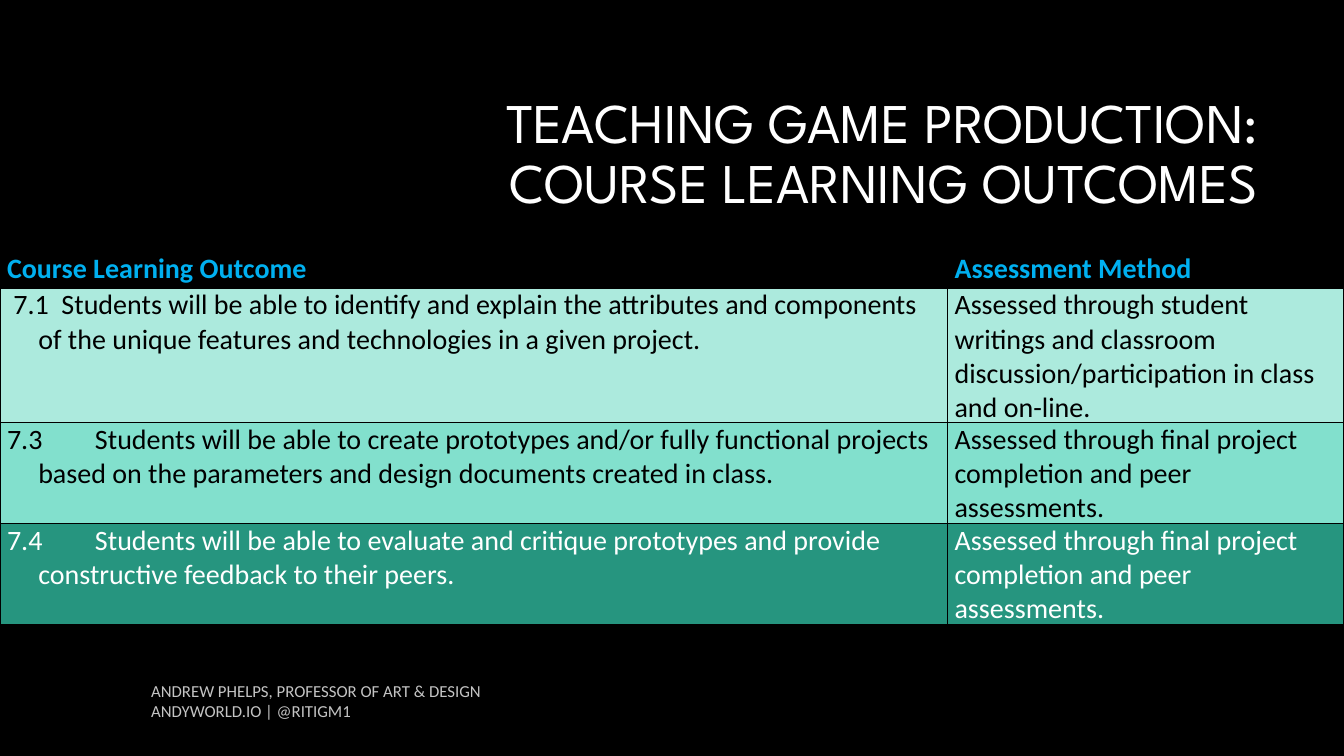
from dataclasses import dataclass

from lxml import etree
from pptx import Presentation
from pptx.dml.color import RGBColor
from pptx.enum.text import MSO_ANCHOR, MSO_AUTO_SIZE, PP_ALIGN
from pptx.oxml.ns import qn
from pptx.util import Inches, Pt

RIGHT = PP_ALIGN.RIGHT
TOP, MIDDLE = MSO_ANCHOR.TOP, MSO_ANCHOR.MIDDLE
NO_AUTOFIT = MSO_AUTO_SIZE.NONE

BLACK = RGBColor(0x00, 0x00, 0x00)
WHITE = RGBColor(0xFF, 0xFF, 0xFF)
GRAY = RGBColor(0xC4, 0xC4, 0xC4)
SKY = RGBColor(0x00, 0xB0, 0xF0)
MINT = RGBColor(0xAC, 0xEA, 0xDD)
AQUA = RGBColor(0x82, 0xE0, 0xCD)
TEAL = RGBColor(0x26, 0x95, 0x7F)

BODY_FONT = "Calibri"
TITLE_FONT = "League Spartan"
SLIDE_WIDTH, SLIDE_HEIGHT = Inches(13.33), Inches(7.5)
GRID_COLUMNS, GRID_ROWS = 160, 90
HANGING = Inches(0.31)
TAB_STOP = Inches(0.38)
CELL_MARGIN = Inches(0.07)


@dataclass(frozen=True)
class OutcomeRow:
    outcome: str
    assessment: str
    rows: float
    ink: RGBColor
    band: RGBColor | None = None
    header: bool = False


FINAL_PROJECT = "Assessed through final project completion and peer assessments."
OUTCOME_COLUMNS = (112.8, 47.2)
OUTCOME_ROWS = (
    OutcomeRow("Course Learning Outcome", "Assessment Method", 4.3, SKY, header=True),
    OutcomeRow(
        " 7.1  Students will be able to identify and explain the attributes and "
        "components of the unique features and technologies in a given project.",
        "Assessed through student writings and classroom "
        "discussion/participation in class and on-line.",
        14.5, BLACK, MINT),
    OutcomeRow(
        "7.3\t Students will be able to create prototypes and/or fully functional "
        "projects based on the parameters and design documents created in class.",
        FINAL_PROJECT, 10.9, BLACK, AQUA),
    OutcomeRow(
        "7.4\t Students will be able to evaluate and critique prototypes and "
        "provide constructive feedback to their peers.",
        FINAL_PROJECT, 10.9, WHITE, TEAL),
)
FOOTER_LINES = ("ANDREW PHELPS, PROFESSOR OF ART & DESIGN", "ANDYWORLD.IO | @RITIGM1")


def across(columns: float) -> int:
    return round(SLIDE_WIDTH * columns / GRID_COLUMNS)


def down(rows: float) -> int:
    return round(SLIDE_HEIGHT * rows / GRID_ROWS)


def add_run(paragraph, text: str, size: float, color: RGBColor,
            font: str = BODY_FONT, bold: bool = False) -> None:
    run = paragraph.add_run()
    run.text = text
    run.font.size = Pt(size)
    run.font.name = font
    run.font.bold = bold
    run.font.color.rgb = color


def add_title(slide) -> None:
    title = slide.shapes.title
    title.left, title.top = across(38), down(10)
    title.width, title.height = across(113), down(17)
    frame = title.text_frame
    frame.word_wrap = True
    frame.auto_size = NO_AUTOFIT
    frame.vertical_anchor = MIDDLE
    heading = frame.paragraphs[0]
    heading.alignment = RIGHT
    heading.line_spacing = 0.9
    add_run(heading, "TEACHING GAME PRODUCTION: COURSE LEARNING OUTCOMES",
            40, WHITE, TITLE_FONT)


def add_footer(slide) -> None:
    frame = slide.shapes.add_textbox(across(18), down(81), across(87), down(6)).text_frame
    frame.word_wrap = True
    frame.vertical_anchor = TOP
    frame.margin_left = frame.margin_right = 0
    frame.margin_top = frame.margin_bottom = 0
    for index, line in enumerate(FOOTER_LINES):
        paragraph = frame.add_paragraph() if index else frame.paragraphs[0]
        add_run(paragraph, line, 12, GRAY)


def add_borders(cell) -> None:
    properties = cell._tc.get_or_add_tcPr()
    for side in ("a:lnL", "a:lnR", "a:lnT", "a:lnB"):
        border = etree.SubElement(properties, qn(side), w=str(Pt(1)))
        fill = etree.SubElement(border, qn("a:solidFill"))
        etree.SubElement(fill, qn("a:srgbClr"), val=str(BLACK))


def hang_number(paragraph) -> None:
    properties = paragraph._p.get_or_add_pPr()
    properties.set("marL", str(HANGING))
    properties.set("indent", str(-HANGING))
    tabs = etree.SubElement(properties, qn("a:tabLst"))
    etree.SubElement(tabs, qn("a:tab"), pos=str(TAB_STOP), algn="l")
    paragraph.space_after = Pt(6)


def fill_cell(cell, text: str, row: OutcomeRow, numbered: bool) -> None:
    cell.margin_left = cell.margin_right = CELL_MARGIN
    cell.margin_top = cell.margin_bottom = 0
    cell.vertical_anchor = TOP
    add_borders(cell)
    if row.band is None:
        cell.fill.background()
    else:
        cell.fill.solid()
        cell.fill.fore_color.rgb = row.band
    paragraph = cell.text_frame.paragraphs[0]
    if numbered:
        hang_number(paragraph)
    add_run(paragraph, text, 20, row.ink, bold=row.header)


def add_outcomes(slide) -> None:
    height = down(sum(row.rows for row in OUTCOME_ROWS))
    table = slide.shapes.add_table(
        len(OUTCOME_ROWS), len(OUTCOME_COLUMNS), 0, down(30), SLIDE_WIDTH, height).table
    table.first_row = False
    table.horz_banding = False
    for column, columns in zip(table.columns, OUTCOME_COLUMNS):
        column.width = across(columns)
    for index, row in enumerate(OUTCOME_ROWS):
        table.rows[index].height = down(row.rows)
        fill_cell(table.cell(index, 0), row.outcome, row, not row.header)
        fill_cell(table.cell(index, 1), row.assessment, row, False)


def main() -> None:
    deck = Presentation()
    deck.slide_width, deck.slide_height = SLIDE_WIDTH, SLIDE_HEIGHT
    slide = deck.slides.add_slide(deck.slide_layouts.get_by_name("Title Only"))
    slide.background.fill.solid()
    slide.background.fill.fore_color.rgb = BLACK
    add_footer(slide)
    add_title(slide)
    add_outcomes(slide)
    deck.save("out.pptx")


if __name__ == "__main__":
    main()
